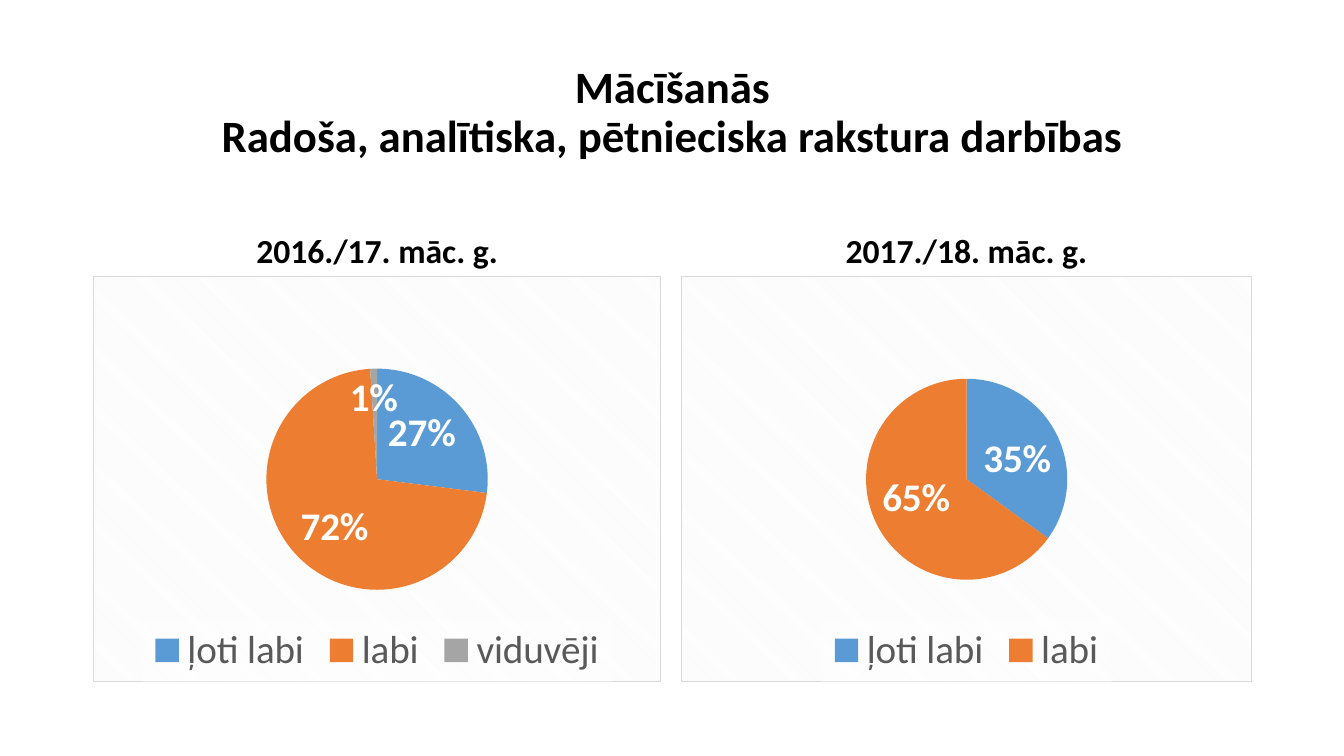
"""Builds a slide comparing two school years with a pie chart for each."""
from dataclasses import dataclass

from lxml.etree import fromstring
from pptx import Presentation
from pptx.chart.data import CategoryChartData as ChartData
from pptx.dml.color import RGBColor as Rgb
from pptx.enum.chart import XL_CHART_TYPE as ChartType
from pptx.enum.chart import XL_LABEL_POSITION as LabelPos
from pptx.enum.chart import XL_LEGEND_POSITION as LegendPos
from pptx.enum.text import MSO_ANCHOR as Anchor
from pptx.enum.text import MSO_AUTO_SIZE as AutoSize
from pptx.enum.text import PP_ALIGN as Align
from pptx.oxml.ns import nsdecls
from pptx.util import Inches, Pt


@dataclass(frozen=True)
class Theme:
    font: str = "Calibri"
    ink: str = "000000"
    legend_ink: str = "595959"
    paper: str = "FFFFFF"
    hatch: str = "F2F2F2"
    border: str = "D9D9D9"
    slices: tuple = ("5B9BD5", "ED7D31", "A5A5A5")
    title_size: int = 32
    heading_size: int = 24
    chart_size: int = 28


def style_font(font, name, size, color, bold=False):
    font.name, font.size, font.bold = name, Pt(size), bold
    font.color.rgb = Rgb.from_string(color)


def write_text(frame, lines, *, font, size, color, anchor, before=0):
    frame.word_wrap = True
    frame.auto_size = AutoSize.NONE
    frame.vertical_anchor = anchor
    paragraph = frame.paragraphs[0]
    paragraph.alignment = Align.CENTER
    paragraph.line_spacing = 0.9
    paragraph.space_before = Pt(before)
    for number, line in enumerate(lines):
        if number:
            paragraph.add_line_break()
        run = paragraph.add_run()
        run.text = line
        style_font(run.font, font, size, color, bold=True)


def set_background(element, paint):
    properties = fromstring(f'<c:spPr {nsdecls("c", "a")}>{paint}</c:spPr>')
    element.find("{*}txPr").addprevious(properties)


class ComparisonSlide:
    def __init__(self, deck, theme):
        self.theme = theme
        self.slide = deck.slides.add_slide(deck.slide_layouts[4])
        self.places = {p.placeholder_format.idx: p for p in self.slide.placeholders}

    def fill_place(self, idx, box, lines, **style):
        place = self.places[idx]
        place.left, place.top, place.width, place.height = map(Inches, box)
        write_text(place.text_frame, lines, font=self.theme.font,
                   color=self.theme.ink, **style)

    def title(self, box, *lines):
        self.fill_place(0, box, lines, size=self.theme.title_size, anchor=Anchor.MIDDLE)

    def heading(self, idx, box, text):
        self.fill_place(idx, box, [text], size=self.theme.heading_size,
                        anchor=Anchor.BOTTOM, before=10)

    def remove_place(self, idx):
        element = self.places[idx].element
        element.getparent().remove(element)

    def pie(self, box, ratings, diameter):
        theme = self.theme
        data = ChartData(number_format="General")
        data.categories = list(ratings)
        data.add_series("Series 1", list(ratings.values()))
        chart = self.slide.shapes.add_chart(
            ChartType.PIE, *map(Inches, box), data).chart
        chart.has_title = False
        style_font(chart.font, theme.font, 10, theme.ink)

        chart.has_legend = True
        legend = chart.legend
        legend.position = LegendPos.BOTTOM
        legend.include_in_layout = False
        style_font(legend.font, theme.font, theme.chart_size, theme.legend_ink)

        plot = chart.plots[0]
        plot.vary_by_categories = True
        series = plot.series[0]
        for number in range(len(ratings)):
            fill = series.points[number].format.fill
            fill.solid()
            fill.fore_color.rgb = Rgb.from_string(theme.slices[number])
        labels = series.data_labels
        labels.show_percentage = True
        labels.show_value = False
        labels.number_format = "0%"
        labels.number_format_is_linked = False
        labels.position = LabelPos.INSIDE_END
        style_font(labels.font, theme.font, theme.chart_size, theme.paper, bold=True)

        self.size_pie(chart, diameter / box[2], diameter / box[3])
        self.paint(chart)

    def size_pie(self, chart, width, height):
        values = {"x": (1 - width) / 2, "y": (1 - height) / 2, "w": width, "h": height}
        parts = "".join(f'<c:{key} val="{value:.3f}"/>' for key, value in values.items())
        layout = fromstring(
            f'<c:layout {nsdecls("c")}><c:manualLayout><c:layoutTarget val="inner"/>'
            f'<c:xMode val="edge"/><c:yMode val="edge"/>{parts}'
            '</c:manualLayout></c:layout>')
        area = chart.element.find(".//{*}plotArea")
        for old in area.findall("{*}layout"):
            area.remove(old)
        area.insert(0, layout)

    def paint(self, chart):
        theme = self.theme
        set_background(chart.element, (
            f'<a:pattFill prst="dkDnDiag"><a:fgClr><a:srgbClr val="{theme.hatch}"/></a:fgClr>'
            f'<a:bgClr><a:srgbClr val="{theme.paper}"/></a:bgClr></a:pattFill>'
            f'<a:ln w="{Pt(0.75)}"><a:solidFill><a:srgbClr val="{theme.border}"/>'
            '</a:solidFill></a:ln>'))
        set_background(chart.legend._element, (
            f'<a:solidFill><a:srgbClr val="{theme.paper}"><a:alpha val="39000"/>'
            '</a:srgbClr></a:solidFill>'))


def main():
    deck = Presentation()
    deck.slide_width, deck.slide_height = Inches(13.33), Inches(7.5)
    page = ComparisonSlide(deck, Theme())
    page.title((0.92, 0.4, 11.5, 1.45),
               "Mācīšanās", "Radoša, analītiska, pētnieciska rakstura darbības")
    years = [
        ("2016./17. māc. g.", 0.92, 5.64, {"ļoti labi": 27, "labi": 72, "viduvēji": 1}, 2.2),
        ("2017./18. māc. g.", 6.75, 5.67, {"ļoti labi": 35, "labi": 65}, 2),
    ]
    for number, (year, left, width, ratings, diameter) in enumerate(years):
        heading_idx = 1 + 2 * number
        page.heading(heading_idx, (left, 1.84, width, 0.9), year)
        page.remove_place(heading_idx + 1)
        page.pie((left, 2.74, width, 4.03), ratings, diameter)
    for idx in (10, 11, 12):
        if idx in page.places:
            page.remove_place(idx)
    deck.save("out.pptx")


if __name__ == "__main__":
    main()
